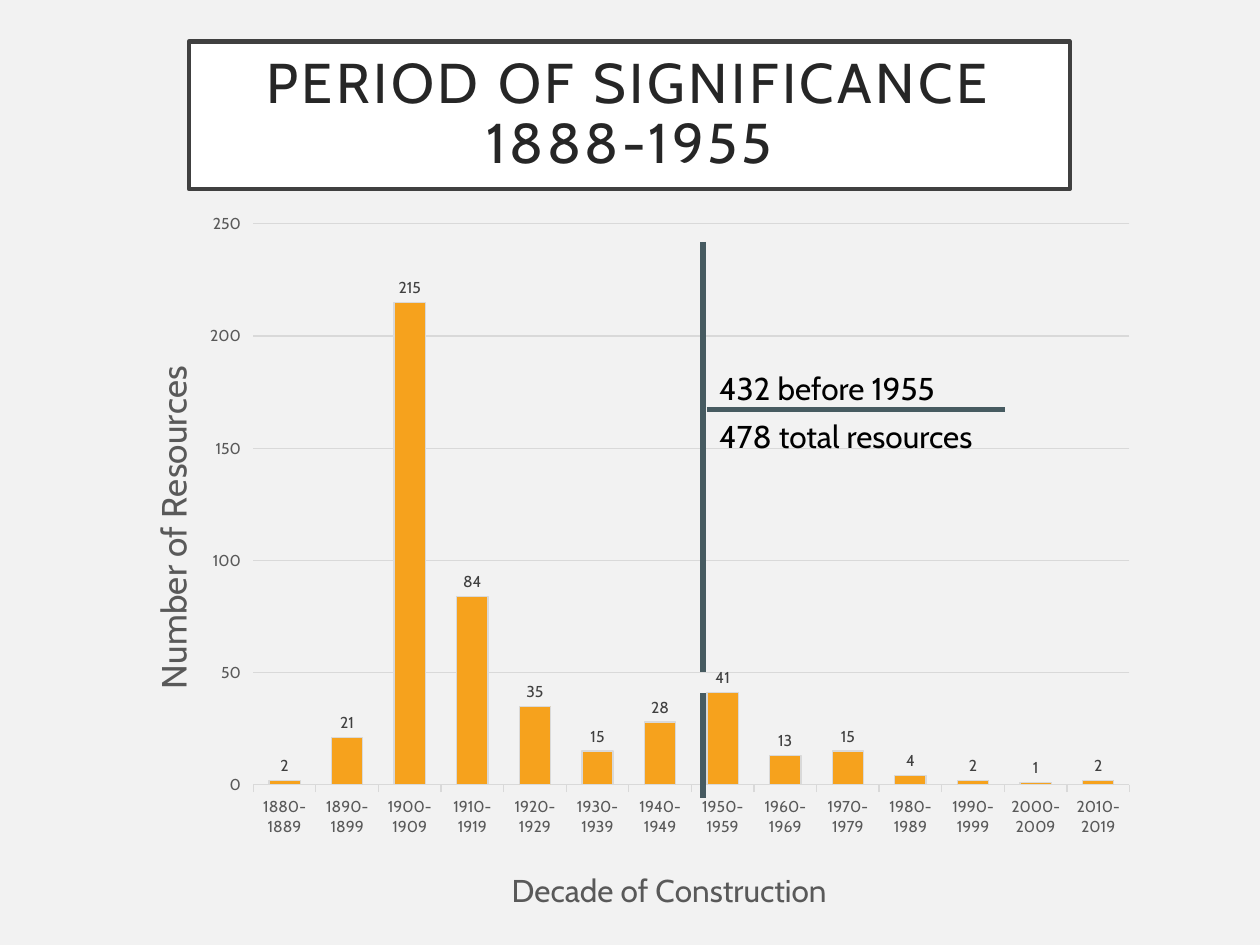
from dataclasses import dataclass

from lxml.etree import SubElement
from pptx import Presentation
from pptx.chart.data import CategoryChartData
from pptx.dml.color import RGBColor
from pptx.enum.chart import XL_CHART_TYPE, XL_LABEL_POSITION, XL_TICK_MARK
from pptx.enum.text import MSO_ANCHOR, PP_ALIGN
from pptx.oxml import parse_xml
from pptx.oxml.ns import nsdecls, qn
from pptx.util import Inches, Pt


@dataclass(frozen=True)
class Theme:
    font: str = "Cabin"
    background: str = "F2F2F2"
    panel: str = "FFFFFF"
    border: str = "404040"
    heading: str = "262626"
    text: str = "000000"
    axis: str = "595959"
    grid: str = "D9D9D9"
    bar: str = "F6A21D"
    marker: str = "475B61"
    title_size: int = 32
    value_title_size: int = 20
    note_size: int = 18
    label_size: int = 9


THEME = Theme()
COUNTS = [2, 21, 215, 84, 35, 15, 28, 41, 13, 15, 4, 2, 1, 2]
DECADES = [f"{year}-{year + 9}" for year in range(1880, 2020, 10)]


def set_all(target, values):
    for name, value in values.items():
        setattr(target, name, value)


def style_font(font, size, color):
    set_all(font, {"name": THEME.font, "size": Pt(size), "bold": False})
    font.color.rgb = RGBColor.from_string(color)


def style_line(line, color, width):
    line.color.rgb = RGBColor.from_string(color)
    line.width = Pt(width)


def style_fill(fill, color):
    fill.solid()
    fill.fore_color.rgb = RGBColor.from_string(color)


def place(shape, box):
    names = ("left", "top", "width", "height")
    set_all(shape, dict(zip(names, map(Inches, box))))


def set_chart_layout(element, index, **fractions):
    """Fix a chart part at fractions of the chart's width and height."""
    for old in element.findall(qn("c:layout")):
        element.remove(old)
    layout = parse_xml(f"<c:layout {nsdecls('c')}><c:manualLayout/></c:layout>")
    manual = layout[0]
    if "w" in fractions:
        SubElement(manual, qn("c:layoutTarget")).set("val", "inner")
    for name in ("xMode", "yMode"):
        SubElement(manual, qn(f"c:{name}")).set("val", "edge")
    for name, value in fractions.items():
        SubElement(manual, qn(f"c:{name}")).set("val", str(value))
    element.insert(index, layout)


def add_title(page, box):
    title = page.shapes.title
    place(title, box)
    style_fill(title.fill, THEME.panel)
    style_line(title.line, THEME.border, 2.5)
    frame = title.text_frame
    sides = ("left", "top", "right", "bottom")
    set_all(frame, {f"margin_{side}": Inches(0.2) for side in sides})
    set_all(frame, {"vertical_anchor": MSO_ANCHOR.MIDDLE, "word_wrap": True})
    para = frame.paragraphs[0]
    para.text = "PERIOD OF SIGNIFICANCE\v1888-1955"
    set_all(para, {"alignment": PP_ALIGN.CENTER, "line_spacing": 0.9})
    for span in para.runs:
        style_font(span.font, THEME.title_size, THEME.heading)
        span.font._element.set("spc", "200")


def add_axis_title(axis, text, size, x, y):
    title = axis.axis_title
    para = title.text_frame.paragraphs[0]
    span = para.add_run()
    span.text = text
    style_font(span.font, size, THEME.axis)
    set_chart_layout(title._element, 1, x=x, y=y)
    return title


def add_decade_chart(page, box):
    data = CategoryChartData()
    data.categories = DECADES
    data.add_series("Series 1", COUNTS)
    chart = page.shapes.add_chart(
        XL_CHART_TYPE.COLUMN_CLUSTERED, *map(Inches, box), data).chart
    set_all(chart, {"has_legend": False, "has_title": False})
    style_font(chart.font, 10, THEME.text)

    plot = chart.plots[0]
    set_all(plot, {"gap_width": 100, "overlap": -27,
                   "vary_by_categories": False, "has_data_labels": True})
    set_all(plot.data_labels, {"show_value": True,
                               "position": XL_LABEL_POSITION.OUTSIDE_END})
    style_font(plot.data_labels.font, THEME.label_size, THEME.border)
    bars = plot.series[0].format
    style_fill(bars.fill, THEME.bar)
    style_line(bars.line, THEME.grid, 0.75)

    decades, counts = chart.category_axis, chart.value_axis
    for axis in (decades, counts):
        axis.major_tick_mark = XL_TICK_MARK.OUTSIDE
        style_font(axis.tick_labels.font, THEME.label_size, THEME.axis)
    style_line(decades.format.line, THEME.grid, 0.75)
    set_all(counts, {"minimum_scale": 0, "maximum_scale": 250,
                     "major_unit": 50, "has_major_gridlines": True})
    counts.format.line.fill.background()
    style_line(counts.major_gridlines.format.line, THEME.grid, 0.75)

    add_axis_title(decades, "Decade of Construction", THEME.note_size, 0.38, 0.91)
    title = add_axis_title(counts, "Number of Resources",
                           THEME.value_title_size, 0.03, 0.22)
    body = title._element.find(".//" + qn("a:bodyPr"))
    body.set("rot", "-5400000")
    body.set("vert", "horz")
    plot_area = chart._chartSpace.find(".//" + qn("c:plotArea"))
    set_chart_layout(plot_area, 0, x=0.137, y=0.034, w=0.843, h=0.769)


def add_marker_line(page, start, end):
    line = page.shapes.add_connector(1, *map(Inches, (*start, *end)))
    style_line(line.line, THEME.marker, 3)
    SubElement(line._element.spPr, qn("a:effectLst"))


def add_cutoff(page, box):
    """Draw the 1955 line, broken at a bar label, with its two totals."""
    left, top, width, height = box
    bottom = top + height
    add_marker_line(page, (left, top), (left, bottom - 1))
    add_marker_line(page, (left, bottom - 0.83), (left, bottom))
    note = page.shapes.add_textbox(
        *map(Inches, (left + 0.03, top + 0.96, 2.23, 0.79)))
    frame = note.text_frame
    frame.word_wrap = True
    for index, text in enumerate(("432 before 1955", "478 total resources")):
        para = frame.add_paragraph() if index else frame.paragraphs[0]
        para.space_after = Pt(6)
        span = para.add_run()
        span.text = text
        style_font(span.font, THEME.note_size, THEME.text)
    divider = top + 1.33
    add_marker_line(page, (left + 0.03, divider), (left + width, divider))


def main():
    deck = Presentation()
    set_all(deck, {"slide_width": Inches(10), "slide_height": Inches(7.5)})
    page = deck.slides.add_slide(deck.slide_layouts[5])
    style_fill(page.background.fill, THEME.background)
    add_title(page, (1.5, 0.33, 6.99, 1.17))
    add_decade_chart(page, (0.88, 1.58, 8.25, 5.79))
    add_cutoff(page, (5.58, 1.92, 2.4, 4.41))
    deck.save("out.pptx")


if __name__ == "__main__":
    main()
